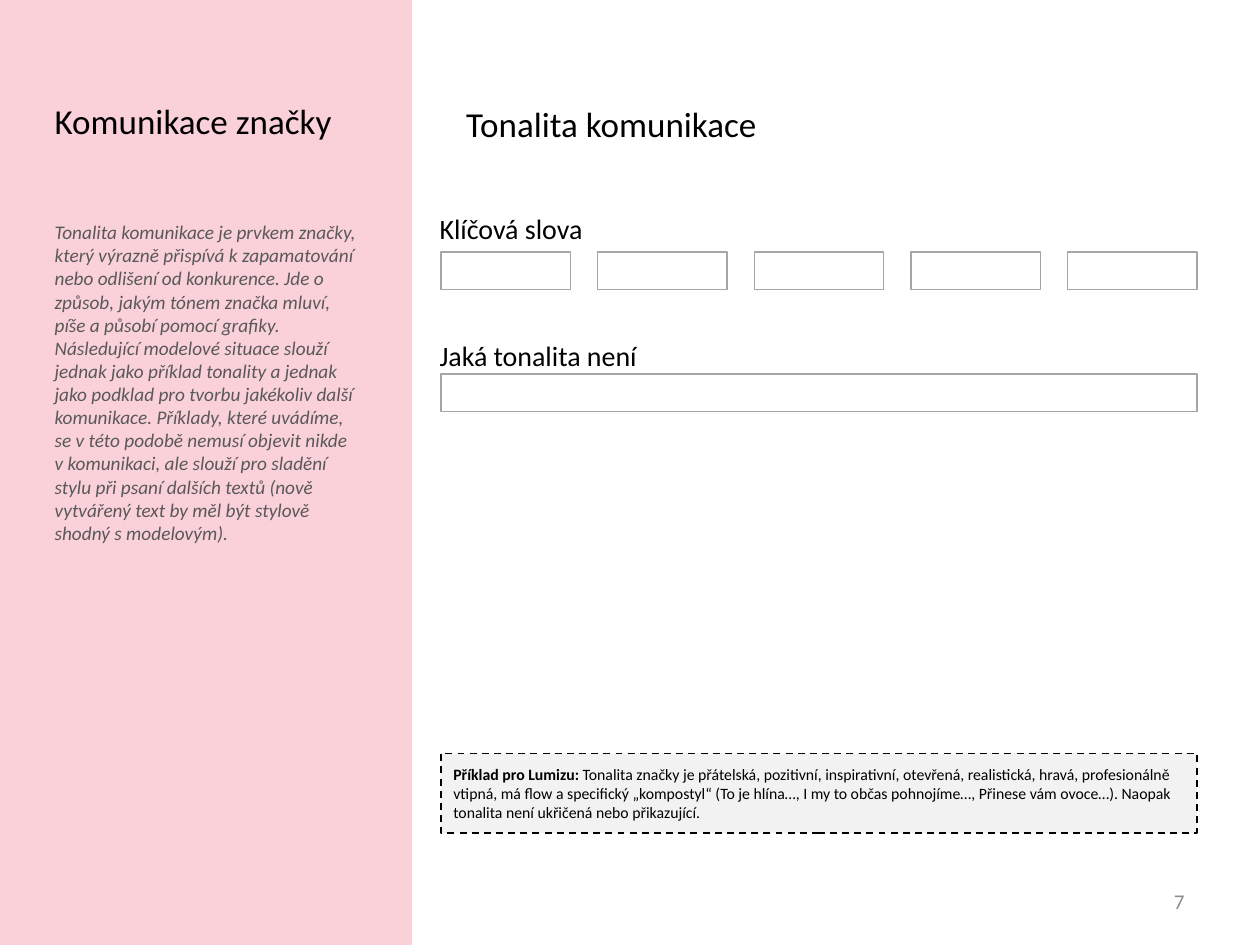
from dataclasses import dataclass

from pptx import Presentation
from pptx.dml.color import RGBColor
from pptx.enum.dml import MSO_LINE
from pptx.enum.shapes import MSO_SHAPE
from pptx.enum.text import MSO_ANCHOR, PP_ALIGN
from pptx.oxml.ns import qn
from pptx.util import Pt


@dataclass(frozen=True)
class Theme:
    font: str = "Calibri"
    panel: str = "F6A2B5"
    ink: str = "000000"
    muted: str = "595959"
    number: str = "8C8C8C"
    outline: str = "A6A6A6"
    note_fill: str = "F2F2F2"
    title_size: float = 20
    label_size: float = 16
    number_size: float = 12
    body_size: float = 11
    note_size: float = 9


class SlideBuilder:
    def __init__(self, slide, theme):
        self.slide = slide
        self.theme = theme

    def set_text(self, shape, runs, size, color, align=PP_ALIGN.LEFT,
                 anchor=MSO_ANCHOR.TOP, italic=False):
        """Fill the shape with one paragraph of (text, bold) runs."""
        frame = shape.text_frame
        frame.word_wrap = True
        frame.vertical_anchor = anchor
        paragraph = frame.paragraphs[0]
        paragraph.alignment = align
        font = paragraph.font
        font.name, font.size, font.italic = self.theme.font, Pt(size), italic
        font.color.rgb = RGBColor.from_string(color)
        for text, bold in runs:
            run = paragraph.add_run()
            run.text = text
            run.font.bold = bold
        return paragraph

    def placeholder(self, index, box, text, size, color, **style):
        holder = self.slide.placeholders[index]
        holder.left, holder.top, holder.width, holder.height = map(Pt, box)
        return self.set_text(holder, [(text, False)], size, color, **style)

    def body(self, index, box, text, size, color, **style):
        """Place a body placeholder as plain text without a bullet."""
        paragraph = self.placeholder(index, box, text, size, color, **style)
        paragraph.space_before, paragraph.space_after = Pt(8), Pt(2)
        properties = paragraph._p.get_or_add_pPr()
        properties.set("marL", "0")
        properties.set("indent", "0")
        no_bullet = properties.makeelement(qn("a:buNone"), {})
        properties.find(qn("a:defRPr")).addprevious(no_bullet)

    def text(self, box, text, size, color, **style):
        shape = self.slide.shapes.add_textbox(*map(Pt, box))
        self.set_text(shape, [(text, False)], size, color, **style)

    def rectangle(self, box, fill=None, line=None, width=0.75):
        shape = self.slide.shapes.add_shape(MSO_SHAPE.RECTANGLE, *map(Pt, box))
        shape.shadow.inherit = False
        if fill:
            shape.fill.solid()
            shape.fill.fore_color.rgb = RGBColor.from_string(fill)
        else:
            shape.fill.background()
        if line:
            shape.line.color.rgb = RGBColor.from_string(line)
            shape.line.width = Pt(width)
        else:
            shape.line.fill.background()
        return shape

    def side_panel(self, box):
        """Draw the half-transparent panel behind everything else."""
        panel = self.rectangle(box, fill=self.theme.panel)
        color = panel._element.spPr.find(".//" + qn("a:srgbClr"))
        color.append(color.makeelement(qn("a:alpha"), {"val": "50000"}))
        self.slide.shapes._spTree.insert(2, panel._element)

    def note(self, box, runs):
        note = self.rectangle(box, self.theme.note_fill, self.theme.ink, 1)
        note.line.dash_style = MSO_LINE.DASH
        self.set_text(note, runs, self.theme.note_size, self.theme.ink,
                      anchor=MSO_ANCHOR.MIDDLE)


TONE_TEXT = (
    "Tonalita komunikace je prvkem značky, který výrazně přispívá k zapamatování "
    "nebo odlišení od konkurence. Jde o způsob, jakým tónem značka mluví, píše "
    "a působí pomocí grafiky. Následující modelové situace slouží jednak jako "
    "příklad tonality a jednak jako podklad pro tvorbu jakékoliv další komunikace. "
    "Příklady, které uvádíme, se v této podobě nemusí objevit nikde v komunikaci, "
    "ale slouží pro sladění stylu při psaní dalších textů (nově vytvářený text "
    "by měl být stylově shodný s modelovým)."
)
EXAMPLE = [
    ("Příklad pro Lumizu: ", True),
    ("Tonalita značky je přátelská, pozitivní, inspirativní, otevřená, realistická, "
     "hravá, profesionálně vtipná, má flow a specifický „kompostyl“ (To je hlína…, "
     "I my to občas pohnojíme…, Přinese vám ovoce…). Naopak tonalita není ukřičená "
     "nebo přikazující.", False),
]
LEFT, WIDTH = 252, 432
KEYWORD_COUNT, KEYWORD_WIDTH, FIELD_HEIGHT = 5, 74, 21.6


def main():
    presentation = Presentation()
    presentation.slide_width, presentation.slide_height = Pt(720), Pt(540)
    theme = Theme()
    slide = presentation.slides.add_slide(presentation.slide_layouts[3])
    builder = SlideBuilder(slide, theme)

    builder.side_panel((0, 0, 235.4, 540))
    builder.body(1, (24, 53.3, 188.6, 36), "Komunikace značky",
                 theme.title_size, theme.ink)
    builder.body(2, (24, 122.4, 188.6, 368.6), TONE_TEXT,
                 theme.body_size, theme.muted, italic=True)
    builder.placeholder(0, (259.2, 53.3, 424.8, 34.6), "Tonalita komunikace",
                        theme.title_size, theme.ink, anchor=MSO_ANCHOR.MIDDLE)

    for label, top in (("Klíčová slova", 117.4), ("Jaká tonalita není", 190.1)):
        builder.text((244.1, top, 270, 26.6), label, theme.label_size, theme.ink)

    pitch = (WIDTH - KEYWORD_WIDTH) / (KEYWORD_COUNT - 1)
    for column in range(KEYWORD_COUNT):
        builder.rectangle((LEFT + column * pitch, 144, KEYWORD_WIDTH, FIELD_HEIGHT),
                          line=theme.outline)
    builder.rectangle((LEFT, 213.8, WIDTH, FIELD_HEIGHT), line=theme.outline)

    builder.note((LEFT, 430.6, WIDTH, 45.4), EXAMPLE)
    builder.text((516.2, 500.4, 167.8, 28.8), "7", theme.number_size, theme.number,
                 align=PP_ALIGN.RIGHT, anchor=MSO_ANCHOR.MIDDLE)
    presentation.save("out.pptx")


if __name__ == "__main__":
    main()
